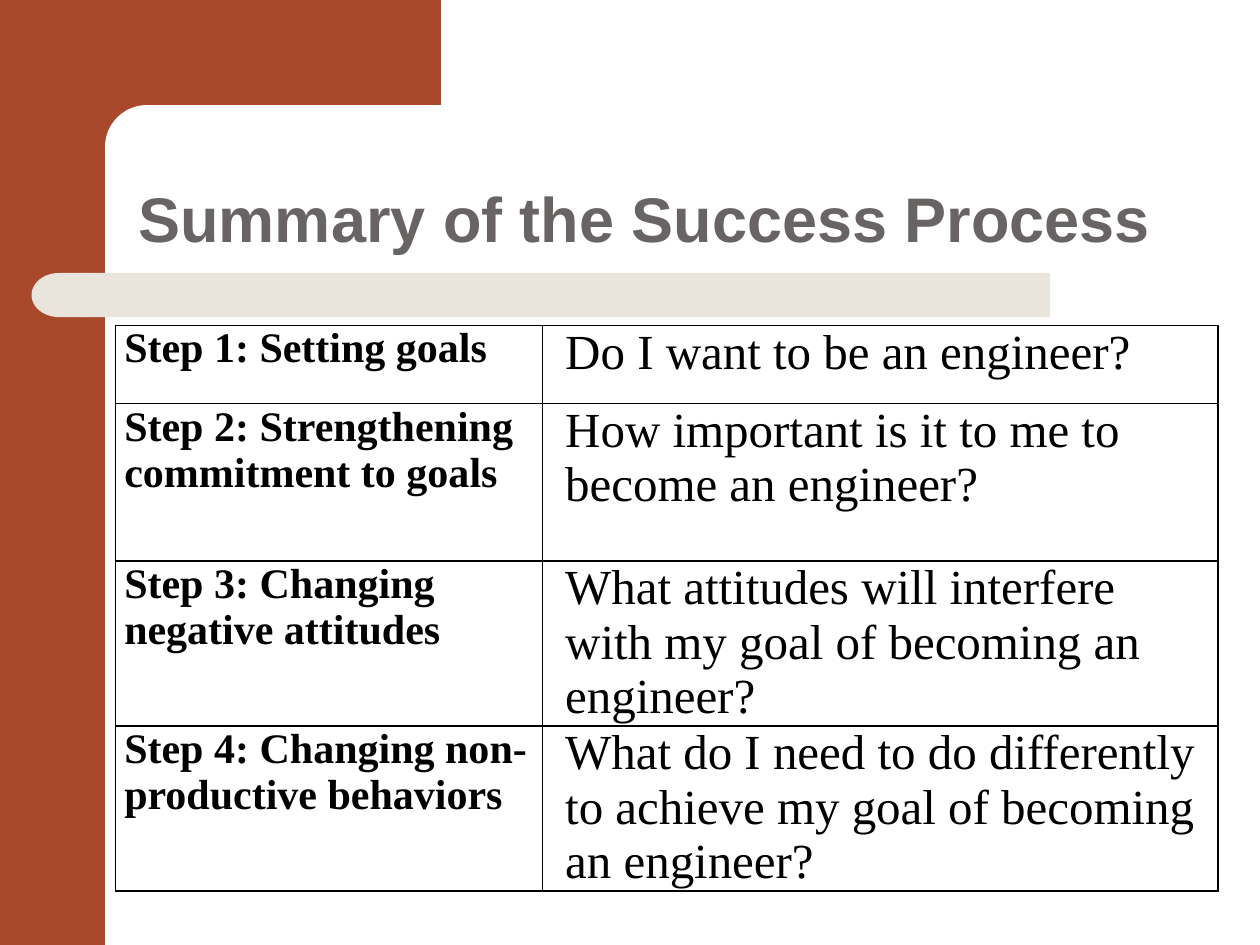
from lxml import etree
from pptx import Presentation
from pptx.dml.color import RGBColor
from pptx.enum.shapes import MSO_SHAPE
from pptx.enum.text import MSO_ANCHOR, MSO_AUTO_SIZE, PP_ALIGN
from pptx.oxml.ns import qn
from pptx.util import Inches, Pt

RECT = MSO_SHAPE.RECTANGLE
ROUND = MSO_SHAPE.ROUNDED_RECTANGLE
DELAY = MSO_SHAPE.FLOWCHART_DELAY
LEFT = PP_ALIGN.LEFT
BOTTOM = MSO_ANCHOR.BOTTOM
NO_FIT = MSO_AUTO_SIZE.NONE

RUST = RGBColor(0xA8, 0x49, 0x2B)
SAND = RGBColor(0xE9, 0xE5, 0xDC)
GREY = RGBColor(0x69, 0x64, 0x64)
WHITE = RGBColor(0xFF, 0xFF, 0xFF)
BLACK = RGBColor(0, 0, 0)

COLS, ROWS = 120, 90  # grid over the whole slide

STEPS = [
    ("Step 1: Setting goals", "Do I want to be an engineer?"),
    ("Step 2: Strengthening commitment to goals",
     "How important is it to me to become an engineer?"),
    ("Step 3: Changing negative attitudes",
     "What attitudes will interfere with my goal of becoming an engineer?"),
    ("Step 4: Changing non-productive behaviors",
     "What do I need to do differently to achieve my goal of becoming an engineer?"),
]


class Deck:
    head_font = "Arial"
    body_font = "Times New Roman"

    def __init__(self):
        self.prs = Presentation()
        self.prs.slide_width = Inches(10)
        self.prs.slide_height = Inches(7.5)
        self.slide = self.prs.slides.add_slide(self.prs.slide_layouts[5])

    def box(self, x, y, w, h):
        dx, dy = self.prs.slide_width / COLS, self.prs.slide_height / ROWS
        return [round(n) for n in (x * dx, y * dy, w * dx, h * dy)]

    def text(self, para, words, font, size, color, bold):
        run = para.add_run()
        run.text = words
        run.font.name = font
        run.font.size = Pt(size)
        run.font.color.rgb = color
        run.font.bold = bold

    def shape(self, kind, place, color, turn=0, bend=None):
        item = self.slide.shapes.add_shape(kind, *self.box(*place))
        item.shadow.inherit = False
        item.fill.solid()
        item.fill.fore_color.rgb = color
        item.line.fill.background()
        item.rotation = turn
        if bend is not None:
            item.adjustments[0] = bend

    def title(self, words, place):
        item = self.slide.shapes.title
        item.left, item.top, item.width, item.height = self.box(*place)
        frame = item.text_frame
        frame.word_wrap = True
        frame.auto_size = NO_FIT
        frame.vertical_anchor = BOTTOM
        para = frame.paragraphs[0]
        para.alignment = LEFT
        para.line_spacing = 0.9
        self.text(para, words, self.head_font, 36, GREY, True)
        # Bring the title in front of the panels
        self.slide.shapes._spTree.append(item._element)

    def border(self, cell):
        props = cell._tc.get_or_add_tcPr()
        for side in ("a:lnL", "a:lnR", "a:lnT", "a:lnB"):
            line = etree.SubElement(props, qn(side), w=str(Pt(1)))
            fill = etree.SubElement(line, qn("a:solidFill"))
            etree.SubElement(fill, qn("a:srgbClr"), val=str(BLACK))

    def cell(self, cell, words, size, bold, indent):
        self.border(cell)
        cell.fill.background()
        cell.margin_left = cell.margin_right = Inches(0.07)
        cell.margin_top = cell.margin_bottom = 0
        para = cell.text_frame.paragraphs[0]
        para.space_before = para.space_after = Pt(6)
        para._p.get_or_add_pPr().set("marL", str(Inches(indent)))
        self.text(para, words, self.body_font, size, BLACK, bold)

    def table(self, data, place, widths, heights):
        grid = self.slide.shapes.add_table(
            len(data), len(widths), *self.box(*place)).table
        grid.first_row = grid.horz_banding = False
        for col, width in zip(grid.columns, widths):
            col.width = Inches(width)
        for row, height, (step, ask) in zip(grid.rows, heights, data):
            row.height = Inches(height)
            self.cell(row.cells[0], step, 24, True, 0)
            self.cell(row.cells[1], ask, 28, False, 0.11)


def main():
    deck = Deck()
    # Corner frame with its rounded inner edge
    deck.shape(RECT, (0, 0, 10, ROWS), RUST)
    deck.shape(RECT, (9, 0, 33, 14), RUST)
    deck.shape(ROUND, (10, 10, 67, 8), WHITE, bend=0.5)
    # Bar under the title
    deck.shape(ROUND, (8, 26, 92, 4.2), SAND, bend=0)
    deck.shape(DELAY, (3, 26, 5.2, 4.2), SAND, turn=180)
    # Title and steps
    deck.title("Summary of the Success Process", (12, 10, 105, 15))
    deck.table(STEPS, (11, 31, 105, 54), (3.39, 5.36), (0.62, 1.25, 1.31, 1.31))
    deck.prs.save("out.pptx")


if __name__ == "__main__":
    main()
